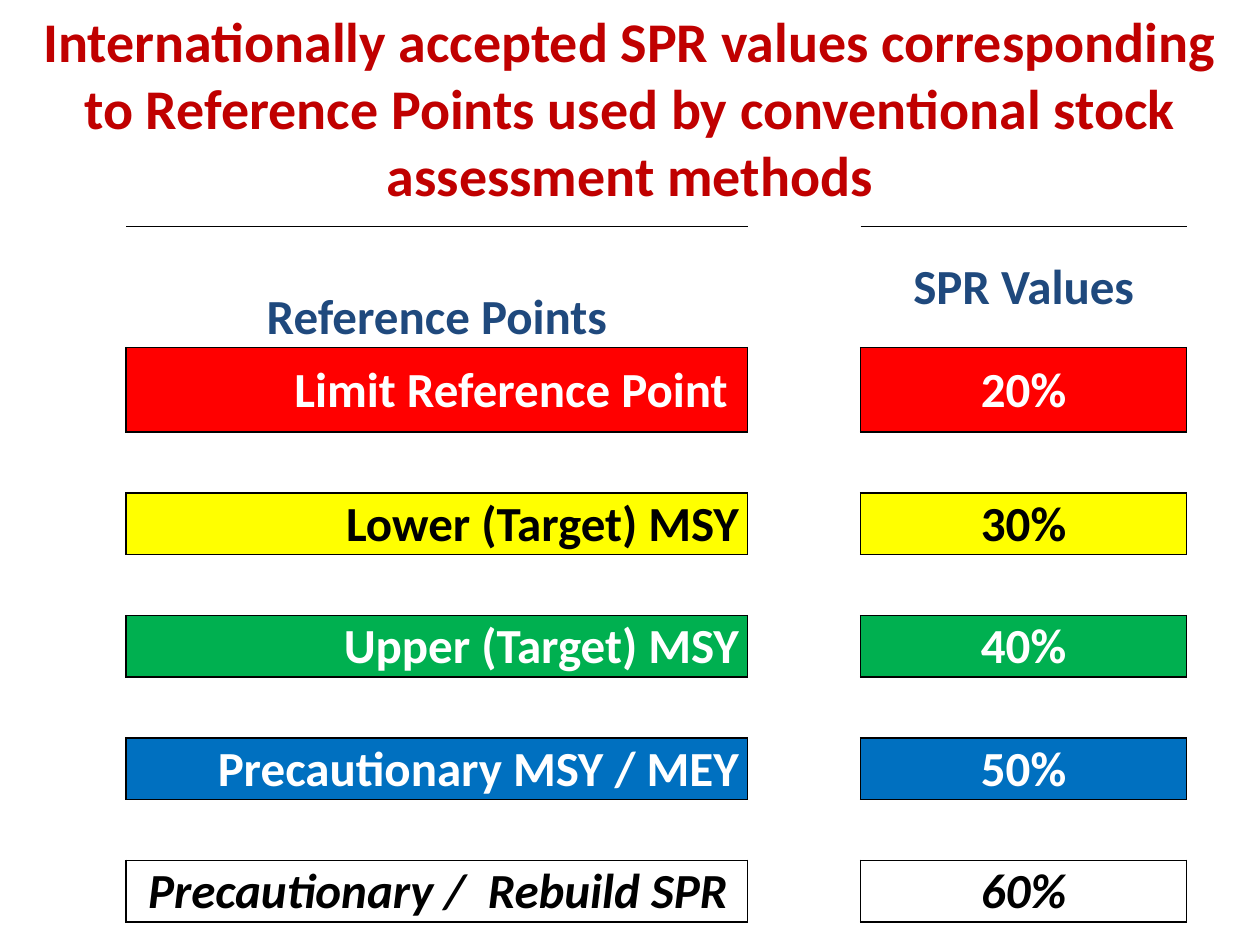
from dataclasses import dataclass

from lxml import etree
from pptx import Presentation, util as u
from pptx.dml.color import RGBColor
from pptx.enum import text
from pptx.oxml import ns

COLOURS = {
    "title": "C00000",
    "heading": "1F497D",
    "red": "FF0000",
    "yellow": "FFFF00",
    "green": "00B050",
    "blue": "0070C0",
    "black": "000000",
    "white": "FFFFFF",
}
FONT = "Calibri"
NO_GRID_STYLE = "{2D5ABB26-0587-4C30-8999-92F81FD0307C}"
COLUMN_WIDTHS = (12.53, 2.28, 6.57)
HEADER_HEIGHT, LIMIT_HEIGHT, ROW_HEIGHT = 2.44, 1.7, 1.23
NAME_COLUMN, VALUE_COLUMN = 0, 2
SIDES = {"lnL": (0, -1), "lnR": (0, 1), "lnT": (-1, 0), "lnB": (1, 0)}
CELL_FORMAT = {
    "margin_left": u.Cm(0.18),
    "margin_right": u.Cm(0.18),
    "margin_top": u.Cm(0.03),
    "margin_bottom": 0,
}


@dataclass
class ReferencePoint:
    name: str
    value: str
    fill: str
    ink: str
    italic: bool = False


POINTS = [
    ReferencePoint("Limit Reference Point ", "20%", "red", "white"),
    ReferencePoint("Lower (Target) MSY", "30%", "yellow", "black"),
    ReferencePoint("Upper (Target) MSY", "40%", "green", "white"),
    ReferencePoint("Precautionary MSY / MEY", "50%", "blue", "white"),
    ReferencePoint("Precautionary /  Rebuild SPR ", "60%", "white", "black", True),
]


def apply(target, values: dict) -> None:
    for name, value in values.items():
        setattr(target, name, value)


def write(frame, wording: str, size: float, ink: str,
          align=text.PP_ALIGN.CENTER, italic: bool = False) -> None:
    para = frame.paragraphs[0]
    para.alignment = align
    span = para.add_run()
    span.text = wording
    apply(span.font, {"name": FONT, "size": u.Pt(size), "bold": True, "italic": italic})
    span.font.color.rgb = RGBColor.from_string(COLOURS[ink])


def is_boxed(row: int, column: int) -> bool:
    return row % 2 == 1 and row < 2 * len(POINTS) and column in (NAME_COLUMN, VALUE_COLUMN)


def add_borders(cell, row: int, column: int) -> None:
    properties = cell._tc.get_or_add_tcPr()
    for side, (down, across) in SIDES.items():
        if is_boxed(row, column) or is_boxed(row + down, column + across):
            line = etree.SubElement(properties, ns.qn(f"a:{side}"), w=str(u.Pt(1)))
            fill = etree.SubElement(line, ns.qn("a:solidFill"))
            etree.SubElement(fill, ns.qn("a:srgbClr"), val=COLOURS["black"])


def fill_cell(cell, wording: str, ink: str, align=text.PP_ALIGN.CENTER,
              anchor=text.MSO_ANCHOR.MIDDLE, italic: bool = False) -> None:
    cell.vertical_anchor = anchor
    write(cell.text_frame, wording, 28, ink, align, italic)


def add_title(page) -> None:
    box = page.shapes.add_textbox(0, 0, u.Cm(25.4), u.Cm(4.37))
    box.text_frame.word_wrap = True
    write(box.text_frame,
          "Internationally accepted SPR values corresponding to Reference Points "
          "used by conventional stock assessment methods", 32, "title")


def add_reference_table(page) -> None:
    heights = [HEADER_HEIGHT, LIMIT_HEIGHT] + [ROW_HEIGHT] * (2 * len(POINTS) - 2)
    table = page.shapes.add_table(
        len(heights), len(COLUMN_WIDTHS), u.Cm(2.54), u.Cm(4.57),
        u.Cm(sum(COLUMN_WIDTHS)), u.Cm(sum(heights))).table
    apply(table, {"first_row": False, "horz_banding": False})
    table._tbl.tblPr.find(ns.qn("a:tableStyleId")).text = NO_GRID_STYLE
    for column, width in zip(table.columns, COLUMN_WIDTHS):
        column.width = u.Cm(width)
    for row, height in enumerate(heights):
        table.rows[row].height = u.Cm(height)
        for column in range(len(COLUMN_WIDTHS)):
            cell = table.cell(row, column)
            apply(cell, CELL_FORMAT)
            add_borders(cell, row, column)
            cell.fill.background()

    fill_cell(table.cell(0, NAME_COLUMN), "Reference Points", "heading",
              anchor=text.MSO_ANCHOR.BOTTOM)
    fill_cell(table.cell(0, VALUE_COLUMN), "SPR Values", "heading")
    for index, point in enumerate(POINTS):
        row = 2 * index + 1
        for column, wording, align in (
            (NAME_COLUMN, point.name, text.PP_ALIGN.RIGHT),
            (VALUE_COLUMN, point.value, text.PP_ALIGN.CENTER),
        ):
            cell = table.cell(row, column)
            fill_cell(cell, wording, point.ink, align, italic=point.italic)
            if point.fill != "white":
                cell.fill.solid()
                cell.fill.fore_color.rgb = RGBColor.from_string(COLOURS[point.fill])


def main() -> None:
    deck = Presentation()
    apply(deck, {"slide_width": u.Cm(25.4), "slide_height": u.Cm(19.05)})
    page = deck.slides.add_slide(deck.slide_layouts[6])
    add_reference_table(page)
    add_title(page)
    deck.save("out.pptx")


if __name__ == "__main__":
    main()
